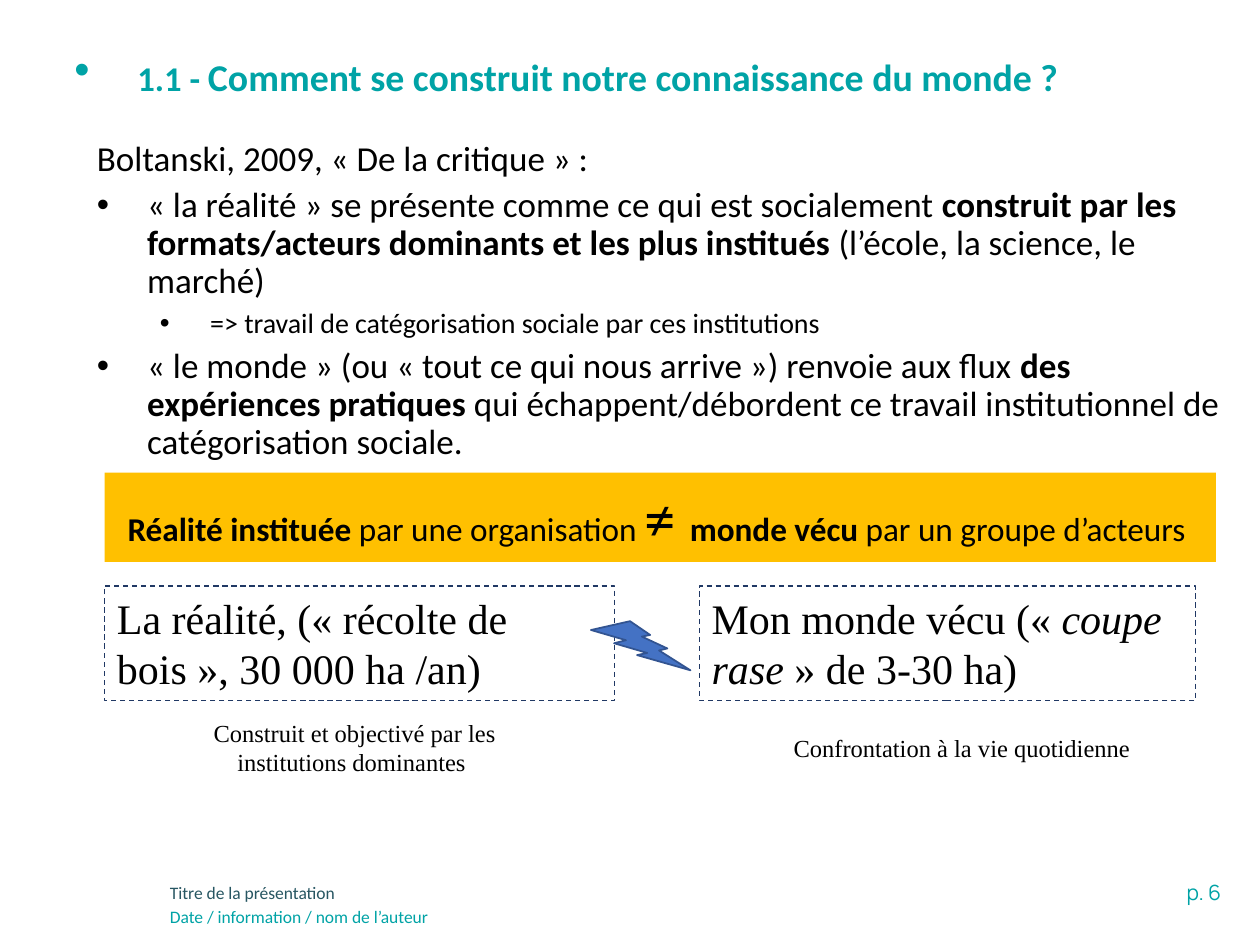
from lxml.etree import SubElement
from pptx import Presentation
from pptx.dml.color import RGBColor
from pptx.enum.dml import MSO_LINE_DASH_STYLE as DASH
from pptx.enum.shapes import MSO_SHAPE as SHAPE
from pptx.enum.text import MSO_ANCHOR as ANCHOR, MSO_AUTO_SIZE as AUTO_SIZE, PP_ALIGN as ALIGN
from pptx.oxml.ns import qn
from pptx.util import Inches, Pt

TEAL, DARK_TEAL, BLACK = "00A3A6", "275662", "000000"
SERIF = "Times New Roman"
HARD_SPACE = chr(160)

TITLE = [("1.1 - ", {"size": 19.8}),
         ("Comment se construit notre connaissance du monde ?", {"size": 21.6}),
         (" ", {"size": 32.4})]

BOLD = {"bold": True}
BODY = [
    (0.4, None, 20, ["Boltanski, 2009, « De la critique » :"]),
    (0.4, "•", 20, ["« la réalité » se présente comme ce qui est socialement ",
                    ("construit par les formats/acteurs dominants et les plus institués", BOLD),
                    " (l’école, la science, le marché)"]),
    (0.9, "•", 16, ["=> travail de catégorisation sociale par ces institutions"]),
    (0.4, "•", 20, ["« le monde » (ou « tout ce qui nous arrive ») renvoie aux flux ",
                    ("des expériences pratiques ", BOLD),
                    "qui échappent/débordent ce travail institutionnel de catégorisation sociale."]),
]

BANNER = [("Réalité instituée ", BOLD), "par une organisation ", ("≠ ", {"size": 36}),
          ("monde vécu ", BOLD), "par un groupe d’acteurs "]

FRAMES = [
    ((0.83, 4.65, 4.05, 0.91), ["La réalité, (« récolte de bois », 30 000 ha /an)"]),
    ((5.55, 4.65, 3.94, 0.91), ["Mon monde vécu (« ", ("coupe rase", {"italic": True}),
                                " » de 3-30 ha)"]),
]
CAPTIONS = [
    ((1.14, 5.65, 3.35, 0.57), "Construit et objectivé par les institutions dominantes "),
    ((5.94, 5.77, 3.39, 0.34), "Confrontation à la vie quotidienne"),
]
FOOTERS = [
    ((7.51, 6.93, 2.28, 0.3), "p. 6", {"size": 12, "font": "Manrope", "color": TEAL,
                                       "align": ALIGN.RIGHT}),
    ((1.25, 6.95, 7.34, 0.28), "Titre de la présentation", {"size": 10, "color": DARK_TEAL}),
    ((1.25, 7.14, 7.34, 0.28), "Date / information / nom de l’auteur",
     {"size": 10, "color": TEAL}),
]


def rgb(value):
    return RGBColor.from_string(value)


def box(position):
    return [Inches(length) for length in position]


def bind_quotes(text):
    return text.replace("« ", "«" + HARD_SPACE).replace(" »", HARD_SPACE + "»")


def write(paragraph, runs, size=20, font="Calibri", color=BLACK, bold=False,
          align=ALIGN.LEFT, indent=None, bullet=None, bullet_percent=100,
          line_spacing=None, space_before=0):
    properties = paragraph._p.get_or_add_pPr()
    if indent:
        left, first = indent
        properties.set("marL", str(Inches(left)))
        properties.set("indent", str(Inches(first)))
    if bullet:
        SubElement(properties, qn("a:buSzPct")).set("val", str(bullet_percent * 1000))
        SubElement(properties, qn("a:buFont")).set("typeface", "Arial")
        SubElement(properties, qn("a:buChar")).set("char", bullet)
    else:
        SubElement(properties, qn("a:buNone"))
    paragraph.alignment = align
    paragraph.space_before = Pt(space_before)
    if line_spacing:
        paragraph.line_spacing = line_spacing
    for item in runs:
        text, style = (item, {}) if isinstance(item, str) else item
        run = paragraph.add_run()
        run.text = bind_quotes(text)
        run.font.name = font
        run.font.size = Pt(style.get("size", size))
        run.font.bold = style.get("bold", bold)
        run.font.italic = style.get("italic", False)
        run.font.color.rgb = rgb(color)


def add_text(slide, position, runs, **style):
    text_box = slide.shapes.add_textbox(*box(position))
    text_box.text_frame.word_wrap = True
    write(text_box.text_frame.paragraphs[0], runs, **style)


def add_shape(slide, kind, position, fill=None, line=None, width=0.75, dash=None):
    shape = slide.shapes.add_shape(kind, *box(position))
    shape.shadow.inherit = False
    if fill:
        shape.fill.solid()
        shape.fill.fore_color.rgb = rgb(fill)
    else:
        shape.fill.background()
    if line:
        shape.line.color.rgb = rgb(line)
        shape.line.width = Pt(width)
        shape.line.dash_style = dash
    else:
        shape.line.fill.background()
    return shape


def add_title(slide):
    title = slide.shapes.title
    title.left, title.top, title.width, title.height = box((0.59, 0.29, 9.14, 0.58))
    frame = title.text_frame
    frame.auto_size = AUTO_SIZE.NONE
    frame.word_wrap = True
    frame.vertical_anchor = ANCHOR.MIDDLE
    frame.margin_left = 0
    write(frame.paragraphs[0], TITLE, color=TEAL, bold=True, indent=(0.5, -0.5),
          bullet="•", bullet_percent=125, line_spacing=0.9)


def add_body(slide):
    frame = slide.shapes.add_textbox(*box((0.67, 1.07, 9.33, 2.53))).text_frame
    frame.word_wrap = True
    for index, (left, bullet, size, runs) in enumerate(BODY):
        paragraph = frame.add_paragraph() if index else frame.paragraphs[0]
        write(paragraph, runs, size=size, indent=(left, -0.4), bullet=bullet,
              line_spacing=0.9, space_before=5 if index else 0)


def main():
    presentation = Presentation()
    presentation.slide_width, presentation.slide_height = Inches(10), Inches(7.5)
    slide = presentation.slides.add_slide(presentation.slide_layouts[5])

    for position, text, style in FOOTERS:
        add_text(slide, position, [text], **style)
    add_title(slide)
    add_body(slide)

    for position, runs in FRAMES:
        frame = add_shape(slide, SHAPE.RECTANGLE, position, line="203864", dash=DASH.DASH)
        frame.text_frame.vertical_anchor = ANCHOR.TOP
        write(frame.text_frame.paragraphs[0], runs, size=24, font=SERIF)
    for position, text in CAPTIONS:
        add_text(slide, position, [text], size=14, font=SERIF, align=ALIGN.CENTER)

    banner = add_shape(slide, SHAPE.RECTANGLE, (0.83, 3.75, 8.82, 0.71), fill="FFC000")
    banner.text_frame.vertical_anchor = ANCHOR.TOP
    write(banner.text_frame.paragraphs[0], BANNER, size=19, align=ALIGN.CENTER)

    add_shape(slide, SHAPE.LIGHTNING_BOLT, (4.69, 4.93, 0.79, 0.39),
              fill="4472C4", line="325491", width=1)
    presentation.save("out.pptx")


if __name__ == "__main__":
    main()
